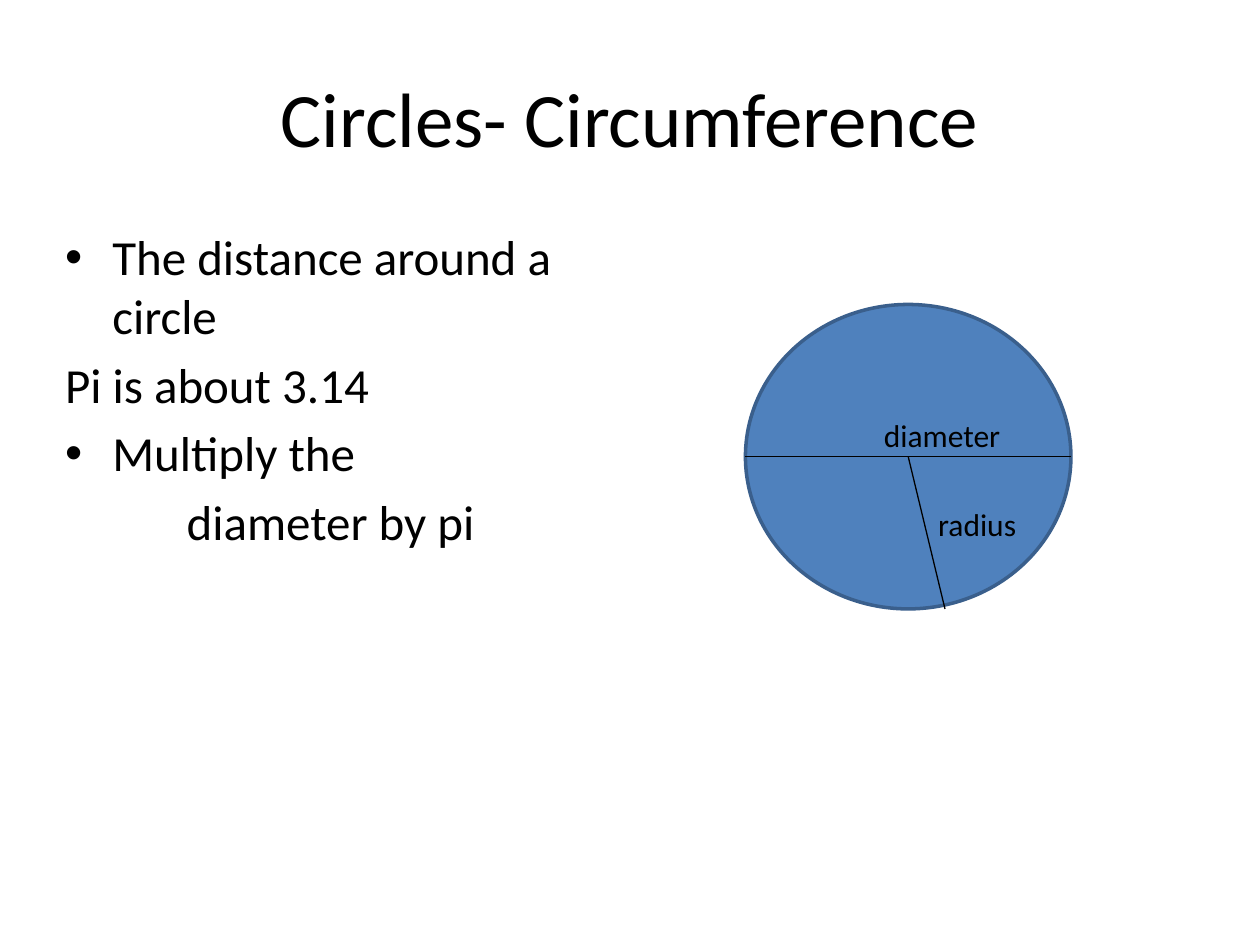
from dataclasses import dataclass

import pptx
import pptx.dml.color
import pptx.enum.shapes
import pptx.enum.text
import pptx.oxml.ns
import pptx.util
from lxml import etree

Pt = pptx.util.Pt
BLACK = "000000"


@dataclass
class Box:
    left: float
    top: float
    width: float
    height: float

    def area(self) -> list:
        return [Pt(v) for v in (self.left, self.top, self.width, self.height)]


@dataclass
class Item:
    text: str
    margin: float = 0
    bullet: bool = False


@dataclass
class Label:
    text: str
    box: Box


@dataclass
class Line:
    start: tuple
    end: tuple


DISC = Box(426, 174, 186, 174)
MID_X = DISC.left + DISC.width / 2
MID_Y = DISC.top + DISC.height / 2
ITEMS = [
    Item("The distance around a circle", 27, True),
    Item("Pi is about 3.14"),
    Item("Multiply the", 27, True),
    Item("diameter by pi", 69.5),
]
LINES = [
    Line((DISC.left, MID_Y), (DISC.left + DISC.width, MID_Y)),
    Line((MID_X, MID_Y), (540, DISC.top + DISC.height)),
]
LABELS = [
    Label("diameter", Box(498, 234, 108, 29)),
    Label("radius", Box(529, 285, 72, 29)),
]


def color(code: str):
    return pptx.dml.color.RGBColor.from_string(code)


def apply(target, values: dict) -> None:
    for name, value in values.items():
        setattr(target, name, value)


def write(para, text: str, size: float) -> None:
    run = para.add_run()
    run.text = text
    apply(run.font, {"name": "Calibri", "size": Pt(size)})
    run.font.color.rgb = color(BLACK)


def place(shape, box: Box) -> None:
    apply(shape, dict(zip(("left", "top", "width", "height"), box.area())))


def add_title(slide, text: str) -> None:
    title = slide.shapes.title
    place(title, Box(36, 21.6, 648, 90))
    frame = title.text_frame
    frame.vertical_anchor = pptx.enum.text.MSO_ANCHOR.MIDDLE
    frame.paragraphs[0].alignment = pptx.enum.text.PP_ALIGN.CENTER
    write(frame.paragraphs[0], text, 44)


def add_list(slide, items: list[Item]) -> None:
    body = slide.placeholders[1]
    place(body, Box(30, 126, 318, 356))
    frame = body.text_frame
    frame.auto_size = pptx.enum.text.MSO_AUTO_SIZE.NONE
    for i, item in enumerate(items):
        para = frame.add_paragraph() if i else frame.paragraphs[0]
        write(para, item.text, 28)
        props = para._p.get_or_add_pPr()
        props.set("marL", str(Pt(item.margin)))
        props.set("indent", str(-Pt(item.margin) if item.bullet else 0))
        tag = "a:buChar" if item.bullet else "a:buNone"
        mark = etree.SubElement(props, pptx.oxml.ns.qn(tag))
        if item.bullet:
            mark.set("char", "•")


def add_disc(slide, box: Box) -> None:
    oval = pptx.enum.shapes.MSO_SHAPE.OVAL
    disc = slide.shapes.add_shape(oval, *box.area())
    disc.shadow.inherit = False
    disc.fill.solid()
    disc.fill.fore_color.rgb = color("4F81BD")
    disc.line.color.rgb = color("3A5F8C")
    disc.line.width = Pt(2)


def add_line(slide, line: Line) -> None:
    kind = pptx.enum.shapes.MSO_CONNECTOR.STRAIGHT
    ends = [Pt(v) for v in line.start + line.end]
    shape = slide.shapes.add_connector(kind, *ends)
    shape.line.color.rgb = color(BLACK)
    shape.line.width = Pt(0.75)
    etree.SubElement(shape._element.spPr, pptx.oxml.ns.qn("a:effectLst"))


def add_label(slide, label: Label) -> None:
    frame = slide.shapes.add_textbox(*label.box.area()).text_frame
    fit = pptx.enum.text.MSO_AUTO_SIZE.SHAPE_TO_FIT_TEXT
    apply(frame, {"word_wrap": True, "auto_size": fit})
    write(frame.paragraphs[0], label.text, 18)


def main() -> None:
    deck = pptx.Presentation()
    apply(deck, {"slide_width": Pt(720), "slide_height": Pt(540)})
    slide = deck.slides.add_slide(deck.slide_layouts[1])
    add_title(slide, "Circles- Circumference")
    add_list(slide, ITEMS)
    add_disc(slide, DISC)
    for line, label in zip(LINES, LABELS):
        add_line(slide, line)
        add_label(slide, label)
    deck.save("out.pptx")


if __name__ == "__main__":
    main()
